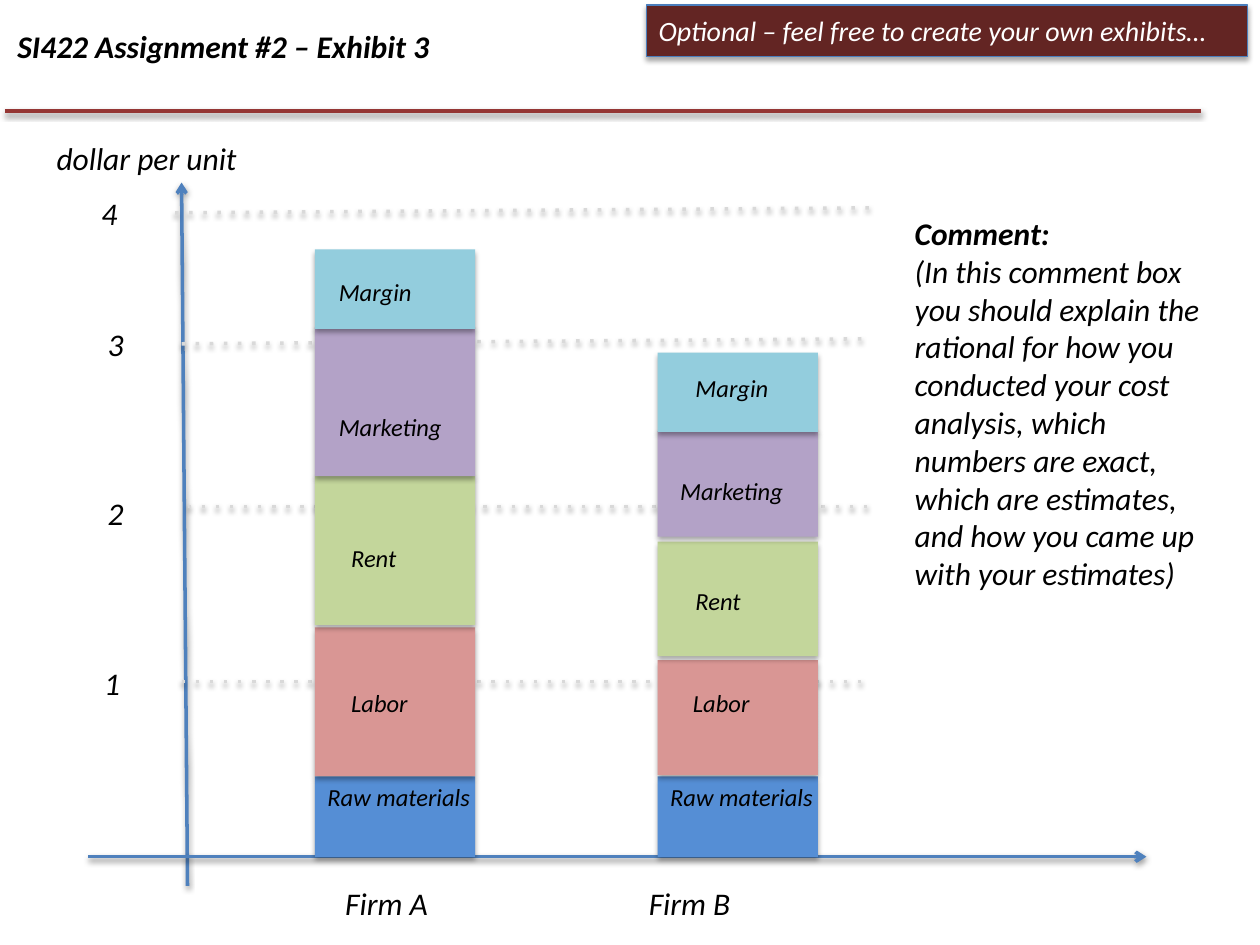
from dataclasses import dataclass

from lxml.etree import SubElement
from pptx import Presentation
from pptx.dml.color import RGBColor
from pptx.enum.shapes import MSO_CONNECTOR, MSO_SHAPE
from pptx.enum.text import MSO_ANCHOR, MSO_AUTO_SIZE, PP_ALIGN
from pptx.oxml.ns import qn
from pptx.util import Cm, Pt


@dataclass(frozen=True)
class Theme:
    font: str = "Calibri"
    body: int = 18
    banner: int = 16
    label: int = 14
    text: str = "000000"
    light: str = "FFFFFF"
    axis: str = "4F81BD"
    grid: str = "D9D9D9"
    rule: str = "953735"
    banner_fill: str = "632523"
    banner_line: str = "4B7EBC"
    segments: tuple = ("558ED5", "D99694", "C3D69B", "B3A2C7", "93CDDD")


class Exhibit:
    def __init__(self, page, theme):
        self.page = page
        self.theme = theme

    def shadow(self, item, opacity, distance):
        effects = SubElement(item._element.spPr, qn("a:effectLst"))
        outer = SubElement(effects, qn("a:outerShdw"), blurRad=str(Pt(3.1)),
                           dist=str(Pt(distance)), dir="5400000", rotWithShape="0")
        color = SubElement(outer, qn("a:srgbClr"), val="000000")
        SubElement(color, qn("a:alpha"), val=str(opacity * 1000))

    def line(self, start, end, color, dotted=False, arrow=False):
        line = self.page.shapes.add_connector(
            MSO_CONNECTOR.STRAIGHT, *(Cm(value) for value in (*start, *end)))
        line.line.color.rgb = RGBColor.from_string(color)
        line.line.width = Pt(2)
        outline = line._element.spPr.find(qn("a:ln"))
        if dotted:
            SubElement(outline, qn("a:prstDash"), val="dot")
        if arrow:
            SubElement(outline, qn("a:tailEnd"), type="arrow")
        self.shadow(line, 38, 1.6)

    def fill_text(self, frame, paragraphs, size, color, bold_first=False):
        frame.word_wrap = True
        for index, content in enumerate(paragraphs):
            para = frame.paragraphs[0] if index == 0 else frame.add_paragraph()
            para.text = content
            para.alignment = PP_ALIGN.LEFT
            para.font.name = self.theme.font
            para.font.size = Pt(size)
            para.font.italic = True
            para.font.bold = bold_first and index == 0
            para.font.color.rgb = RGBColor.from_string(color)

    def text(self, left, top, width, *paragraphs, height=1.02, size=None, bold_first=False):
        box = self.page.shapes.add_textbox(Cm(left), Cm(top), Cm(width), Cm(height))
        box.text_frame.auto_size = MSO_AUTO_SIZE.SHAPE_TO_FIT_TEXT
        self.fill_text(box.text_frame, paragraphs, size or self.theme.body,
                       self.theme.text, bold_first)

    def rectangle(self, left, top, width, height, fill, line=None):
        shape = self.page.shapes.add_shape(
            MSO_SHAPE.RECTANGLE, Cm(left), Cm(top), Cm(width), Cm(height))
        shape.fill.solid()
        shape.fill.fore_color.rgb = RGBColor.from_string(fill)
        if line:
            shape.line.color.rgb = RGBColor.from_string(line)
            shape.line.width = Pt(0.75)
        else:
            shape.line.fill.background()
        self.shadow(shape, 35, 1.8)
        return shape

    def banner(self, left, top, width, height, content):
        shape = self.rectangle(left, top, width, height,
                               self.theme.banner_fill, self.theme.banner_line)
        shape.text_frame.vertical_anchor = MSO_ANCHOR.MIDDLE
        self.fill_text(shape.text_frame, [content], self.theme.banner, self.theme.light)

    def stack(self, left, segments):
        for (name, label_width), fill, segment in zip(COSTS, self.theme.segments, segments):
            top, height, indent, label_top = segment
            self.rectangle(left, top, BAR_WIDTH, height, fill)
            self.text(left + indent, label_top, label_width, name,
                      height=0.86, size=self.theme.label)


BAR_WIDTH = 3.23
COSTS = [("Raw materials", 3.56), ("Labor", 2.46), ("Rent", 2.46),
         ("Marketing", 2.77), ("Margin", 2.77)]
FIRM_A = [(15.65, 1.63, 0, 15.65), (12.65, 3, 0.48, 13.74), (9.6, 3, 0.48, 10.82),
          (6.6, 3, 0.23, 8.18), (5.03, 1.6, 0.23, 5.46)]
FIRM_B = [(15.65, 1.63, 0, 15.65), (13.31, 2.31, 0.46, 13.74), (10.92, 2.31, 0.51, 11.68),
          (8.69, 2.13, 0.2, 9.47), (7.11, 1.6, 0.51, 7.39)]
TICKS = [(" 4", 1.65, 3.78, 1.88, (3.53, 4.29), 4.19),
         (" 3", 1.78, 6.43, 1.52, (3.66, 6.93), 6.83),
         (" 2", 1.78, 9.83, 2.16, (3.78, 10.21), 10.21),
         ("1", 1.85, 13.26, 1.75, (3.66, 13.74), 13.74)]


def main():
    deck = Presentation()
    deck.slide_width, deck.slide_height = Cm(25.4), Cm(19.05)
    theme = Theme()
    exhibit = Exhibit(deck.slides.add_slide(deck.slide_layouts[6]), theme)

    exhibit.line((3.78, 17.86), (3.66, 3.68), theme.axis, arrow=True)
    exhibit.line((1.78, 17.27), (23.11, 17.27), theme.axis, arrow=True)
    for name, left, top, width, start, end_height in TICKS:
        exhibit.text(left, top, width, name)
        exhibit.line(start, (17.55, end_height), theme.grid, dotted=True)
    exhibit.text(0.89, 2.67, 4.8, "dollar per unit")
    exhibit.text(12.83, 17.7, 5.23, "Firm B")
    exhibit.text(6.71, 17.7, 2.77, "Firm A")

    exhibit.stack(6.35, FIRM_A)
    exhibit.stack(13.26, FIRM_B)

    exhibit.text(0.1, 0.43, 24.74, "SI422 Assignment #2 – Exhibit 3", bold_first=True)
    exhibit.line((0.1, 2.24), (24.21, 2.24), theme.rule)
    exhibit.text(18.19, 4.19, 6.3, "Comment:",
                 "(In this comment box you should explain the rational for how you "
                 "conducted your cost analysis, which numbers are exact, which are "
                 "estimates, and how you came up with your estimates)",
                 height=7.95, bold_first=True)
    exhibit.banner(13.03, 0.1, 12.12, 1.04,
                   "Optional – feel free to create your own exhibits…")
    deck.save("out.pptx")


if __name__ == "__main__":
    main()
